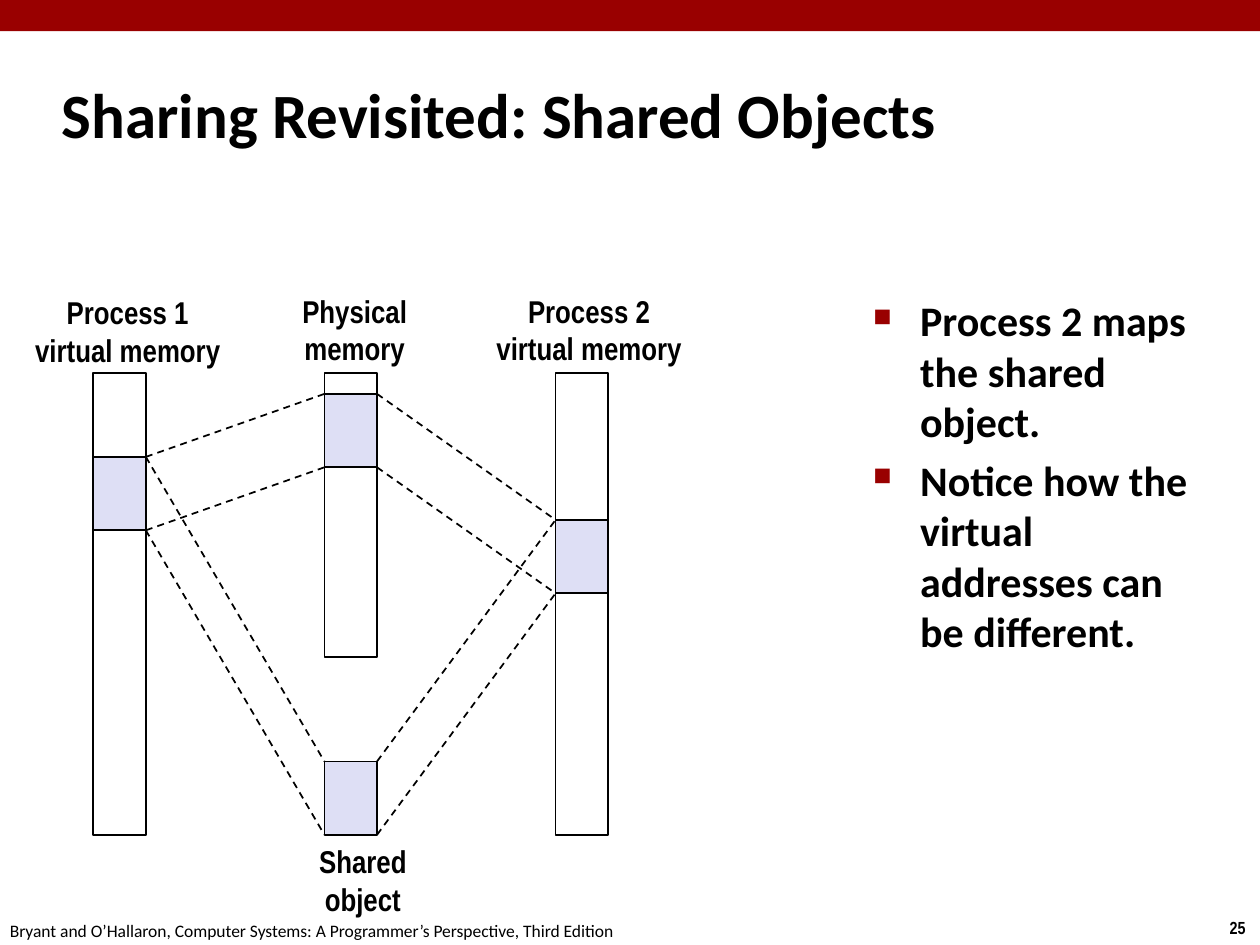
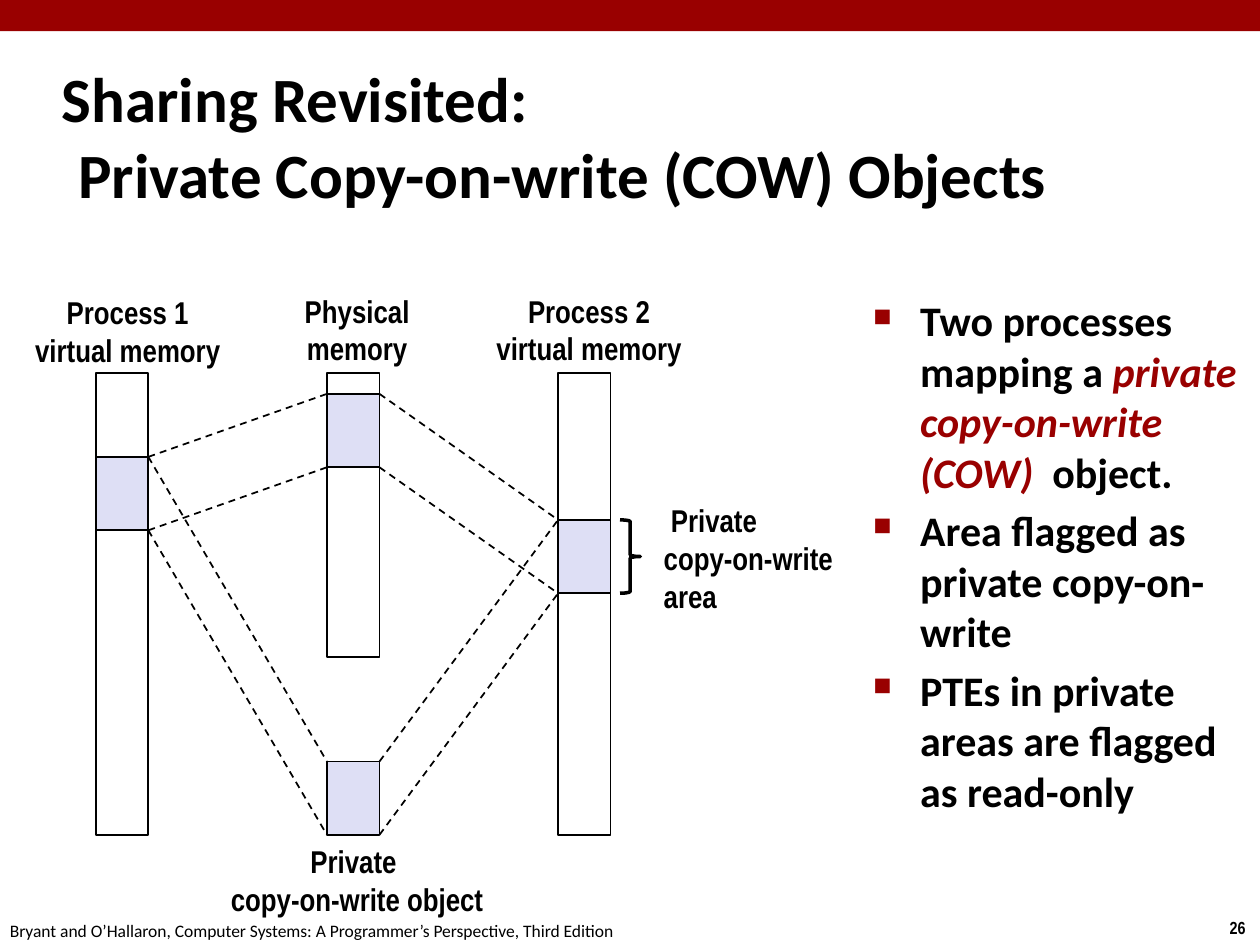
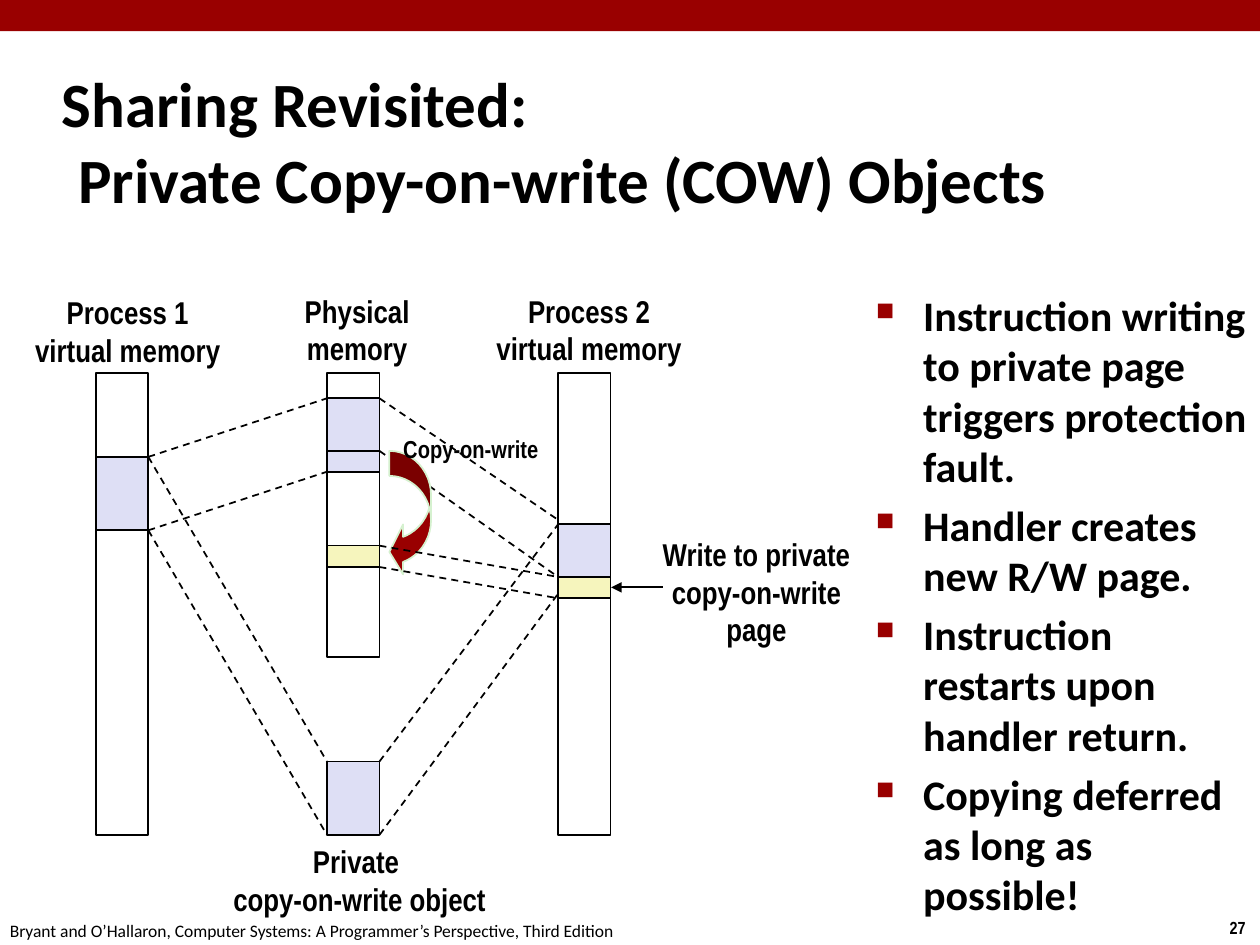
from dataclasses import dataclass
from typing import NamedTuple

from lxml.etree import SubElement
from pptx import Presentation
from pptx.dml.color import RGBColor
from pptx.enum.dml import MSO_LINE
from pptx.enum.shapes import MSO_CONNECTOR, MSO_SHAPE
from pptx.enum.text import MSO_ANCHOR, MSO_AUTO_SIZE, PP_ALIGN
from pptx.oxml.ns import qn
from pptx.util import Cm, Pt


@dataclass(frozen=True)
class Theme:
    red: str = "990000"
    black: str = "000000"
    blue: str = "DEDFF5"
    yellow: str = "F6F5BD"
    mint: str = "D5F1CF"
    sans: str = "Calibri"
    narrow: str = "Arial Narrow"
    title: int = 36
    body: int = 24
    label: int = 18
    note: int = 14
    foot: int = 10


class Part(NamedTuple):
    left: float
    top: float
    high: float = 1.48


WIDE = 1.06
STEP = 4.66
TOP = 7.52
FOOT = "Bryant and O’Hallaron, Computer Systems: A Programmer’s Perspective, Third Edition"
COW = "Sharing Revisited:\vPrivate Copy-on-write (COW) Objects"


def write(frame, text, font, size, color, bold=True, align=PP_ALIGN.LEFT,
          accent=None, before=0):
    for row, line in enumerate(text.split("\n")):
        para = frame.paragraphs[0] if row == 0 else frame.add_paragraph()
        para.alignment = align
        para.space_before = Pt(before)
        for turn, piece in enumerate(line.split("*")):
            for count, words in enumerate(piece.split("\v")):
                if count:
                    para.add_line_break()
                run = para.add_run()
                run.text = words
                run.font.name = font
                run.font.size = Pt(size)
                run.font.bold = bold
                run.font.italic = turn % 2 == 1
                tint = accent if turn % 2 else color
                run.font.color.rgb = RGBColor.from_string(tint)


class Deck:
    def __init__(self, theme):
        self.theme = theme
        self.show = Presentation()
        self.show.slide_width = Cm(25.4)
        self.show.slide_height = Cm(19.05)
        self.slide = None

    def start(self, number, title, high):
        look = self.theme
        self.slide = self.show.slides.add_slide(self.show.slide_layouts[6])
        self.shape(MSO_SHAPE.RECTANGLE, 0, 0, 25.4, 0.63, fill=look.red, line=None)
        self.text(str(number), 24.54, 18.36, 0.86, 0.68, font=look.narrow,
                  size=look.foot, color=look.black)
        self.text(FOOT, -0.05, 18.42, 12.9, 0.68, font=look.sans,
                  size=look.foot, color=look.black, bold=False)
        box = self.text(title, 1, 1.22, 21.08, high, wrap=True,
                        anchor=MSO_ANCHOR.MIDDLE, font=look.sans,
                        size=look.title, color=look.black)
        self.hang(box, 0.33)

    def text(self, words, left, top, wide, high, wrap=False,
             anchor=MSO_ANCHOR.TOP, **style):
        box = self.slide.shapes.add_textbox(Cm(left), Cm(top), Cm(wide), Cm(high))
        frame = box.text_frame
        frame.word_wrap = wrap
        frame.auto_size = MSO_AUTO_SIZE.NONE if wrap else MSO_AUTO_SIZE.SHAPE_TO_FIT_TEXT
        frame.vertical_anchor = anchor
        write(frame, words, **style)
        return box

    def hang(self, box, depth):
        rules = [para.get_or_add_pPr() for para in box.element.iter(qn("a:p"))]
        for rule in rules:
            rule.set("marL", str(Cm(depth)))
            rule.set("indent", str(-Cm(depth)))
        return rules

    def points(self, words, left, top, wide, high):
        look = self.theme
        box = self.text(words, left, top, wide, high, wrap=True, font=look.sans,
                        size=look.body, color=look.black, accent=look.red, before=4.8)
        for rule in self.hang(box, 0.95):
            tint = SubElement(rule, qn("a:buClr"))
            SubElement(tint, qn("a:srgbClr"), val=look.red)
            SubElement(rule, qn("a:buSzPct"), val="60000")
            SubElement(rule, qn("a:buChar"), char="■")

    def label(self, words, left, top, wide, high=1.8, size=None, align=PP_ALIGN.CENTER):
        look = self.theme
        self.text(words, left, top, wide, high, anchor=MSO_ANCHOR.MIDDLE, align=align,
                  font=look.narrow, size=size or look.label, color=look.black)

    def shape(self, kind, left, top, wide, high, fill=None, line=Theme.black, weight=1):
        form = self.slide.shapes.add_shape(kind, Cm(left), Cm(top), Cm(wide), Cm(high))
        form.shadow.inherit = False
        if fill:
            form.fill.solid()
            form.fill.fore_color.rgb = RGBColor.from_string(fill)
        else:
            form.fill.background()
        if line:
            form.line.color.rgb = RGBColor.from_string(line)
            form.line.width = Pt(weight)
        else:
            form.line.fill.background()
        return form

    def block(self, part, fill=None):
        self.shape(MSO_SHAPE.RECTANGLE, part.left, part.top, WIDE, part.high, fill=fill)

    def line(self, *ends, dash=False, arrow=False):
        link = self.slide.shapes.add_connector(MSO_CONNECTOR.STRAIGHT, *map(Cm, ends))
        link.line.color.rgb = RGBColor.from_string(self.theme.black)
        link.line.width = Pt(1)
        if dash:
            link.line.dash_style = MSO_LINE.DASH
        props = link.element.spPr
        if arrow:
            SubElement(props.find(qn("a:ln")), qn("a:tailEnd"), type="triangle")
        SubElement(props, qn("a:effectLst"))

    def join(self, first, second):
        for drop, fall in ((0, 0), (first.high, second.high)):
            self.line(first.left + WIDE, first.top + drop,
                      second.left, second.top + fall, dash=True)

    def memory(self, left, shift=0):
        one, mid, two = (left + STEP * col for col in range(3))
        for spot, high in ((one, 9.32), (mid, 5.72), (two, 9.32)):
            self.block(Part(spot, TOP, high))
        parts = (Part(one, 9.21), Part(mid, 7.94 + shift),
                 Part(two, 10.48 + shift), Part(mid, 15.35))
        for part in parts:
            self.block(part, self.theme.blue)
        self.label("Process 1\nvirtual memory", 0.43, 5.77, 4.29)
        self.label("Physical\nmemory", left + 3.95, 5.74, 2.64)
        self.label("Process 2\nvirtual memory", 9.73, 5.74, 4.29)
        return parts

    def links(self, one, real, two, shared):
        self.join(one, shared)
        self.join(shared, two)
        self.join(one, real)
        self.join(real, two)


def shared(deck):
    deck.start(25, "Sharing Revisited: Shared Objects", 2.11)
    deck.links(*deck.memory(1.88))
    deck.label("Shared\nobject", 6.17, 16.84, 2.29)
    deck.points("Process 2 maps the shared object.\n"
                "Notice how the virtual addresses can be different.",
                17.35, 5.82, 7.37, 12.8)


def private(deck):
    deck.start(26, COW, 3.02)
    deck.links(*deck.memory(1.93))
    deck.label("Private \ncopy-on-write object", 4.37, 16.84, 5.66)
    deck.label(" Private\ncopy-on-write\narea", 13.13, 9.96, 4.01, 2.57,
               align=PP_ALIGN.LEFT)
    deck.shape(MSO_SHAPE.RIGHT_BRACE, 12.5, 10.48, 0.41, 1.48, weight=2)
    deck.points("Two processes mapping a *private copy-on-write (COW) * object.\n"
                "Area flagged as private copy-on-write\n"
                "PTEs in private areas are flagged as read-only",
                17.35, 5.82, 8.05, 11.63)


def copied(deck):
    look = deck.theme
    deck.start(27, COW, 3.23)
    one, real, two, store = deck.memory(1.93, shift=0.09)
    old = Part(real.left, 9.09, 0.43)
    new = Part(real.left, 11, 0.43)
    page = Part(two.left, 11.63, 0.43)
    deck.join(one, store)
    deck.join(store, two._replace(high=1.4))
    deck.join(one, real)
    deck.join(real._replace(high=1.06), Part(two.left, 10.48, 1.15))
    arrow = deck.shape(MSO_SHAPE.CURVED_LEFT_ARROW, 7.85, 9.09, 0.84, 2.54,
                       fill=look.red, line=look.mint)
    for spot, size in enumerate((0.6, 1.2, 0.33)):
        arrow.adjustments[spot] = size
    deck.label("Copy-on-write", 7.87, 8.61, 3.25, 0.86, size=look.note)
    deck.block(old, look.blue)
    deck.block(page, look.yellow)
    deck.block(new, look.yellow)
    deck.join(new, page)
    deck.label("Private \ncopy-on-write object", 4.42, 16.84, 5.66)
    deck.label("Write to private\ncopy-on-write\npage", 13.08, 10.64, 4.34, 2.57)
    deck.line(13.36, 11.84, 12.32, 11.84, arrow=True)
    deck.points("Instruction writing to private page triggers protection fault.\n"
                "Handler creates new R/W page.\n"
                "Instruction restarts upon handler return.\n"
                "Copying deferred as long as possible!",
                17.41, 5.71, 7.99, 12.52)


def main():
    deck = Deck(Theme())
    for draw in (shared, private, copied):
        draw(deck)
    deck.show.save("out.pptx")


if __name__ == "__main__":
    main()
